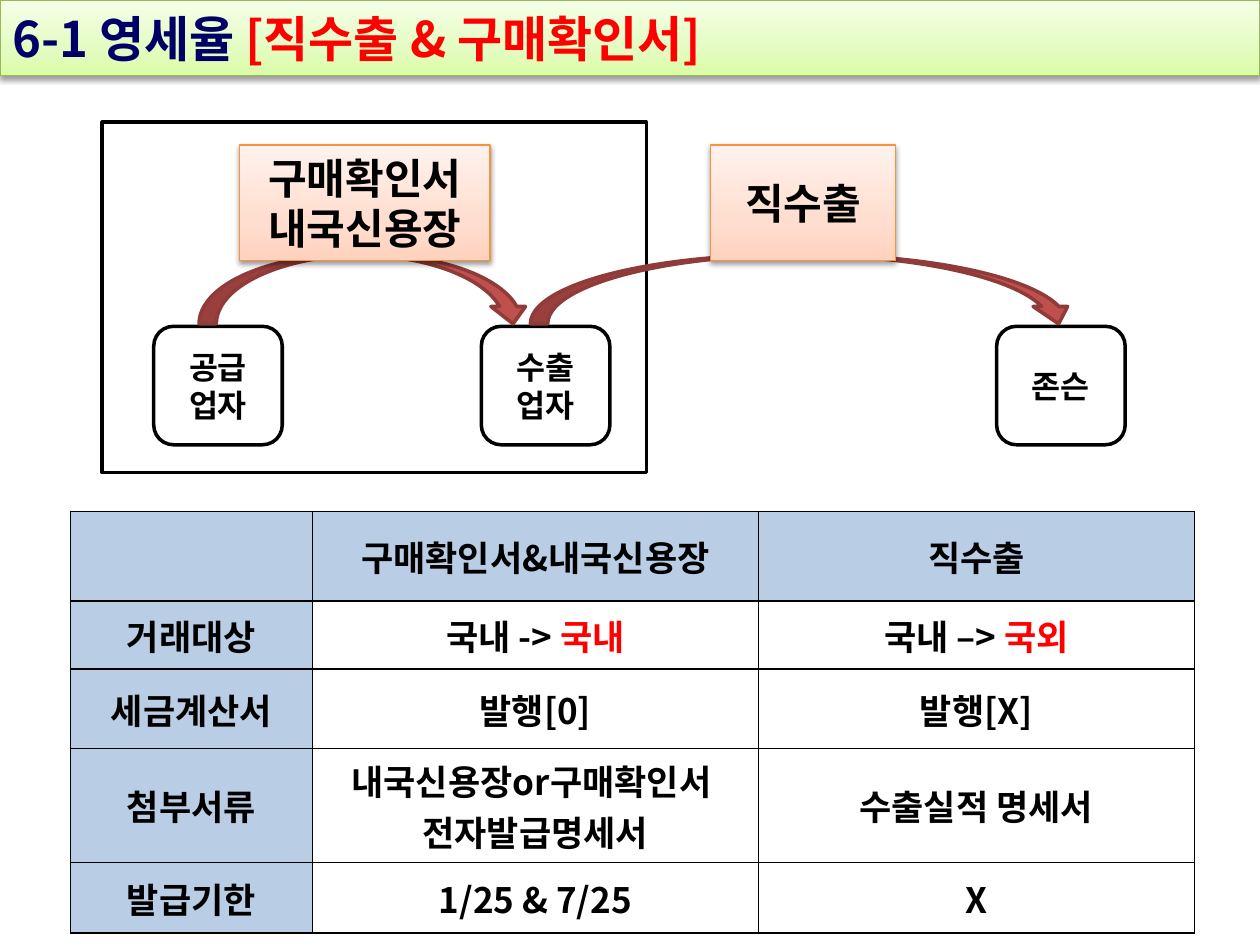
from dataclasses import dataclass

from lxml import etree
from pptx import Presentation
from pptx.dml.color import RGBColor
from pptx.enum import shapes, text
from pptx.oxml import ns
from pptx.util import Inches, Pt


@dataclass(frozen=True)
class Theme:
    font: str = "Noto Sans CJK KR"
    black: str = "000000"
    white: str = "FFFFFF"
    navy: str = "000066"
    red: str = "FF0000"
    header: str = "B9CDE5"
    arrow: str = "C0504D"
    arrow_line: str = "8E3B39"
    green: tuple = ((0, "DAFDA7"), (35, "E4FCC2"), (100, "F5FFE7"))
    green_line: str = "98B955"
    orange: tuple = ((0, "FFD2BD"), (35, "FFDED0"), (100, "FFF2ED"))
    orange_line: str = "F69240"
    title_size: int = 28
    label_size: int = 24
    table_size: int = 20
    party_size: int = 18


THEME = Theme()
SHAPE = shapes.MSO_SHAPE


def sub(parent, tag, **attributes):
    return etree.SubElement(parent, ns.qn(tag), {k: str(v) for k, v in attributes.items()})


def write(frame, lines, size, align=text.PP_ALIGN.CENTER):
    """Each line is a list of (words, colour) runs."""
    for i, line in enumerate(lines):
        paragraph = frame.paragraphs[0] if i == 0 else frame.add_paragraph()
        paragraph.alignment = align
        for words, colour in line:
            run = paragraph.add_run()
            run.text = words
            for key, value in {"name": THEME.font, "size": Pt(size), "bold": True}.items():
                setattr(run.font, key, value)
            run.font.color.rgb = RGBColor.from_string(colour)
            sub(run.font._element, "a:ea", typeface=THEME.font)


def plain(*lines):
    return [[(line, THEME.black)] for line in lines]


def add_box(slide, kind, box, fill, line, width):
    shape = slide.shapes.add_shape(kind, *map(Inches, box))
    shape.shadow.inherit = False
    shape.line.color.rgb = RGBColor.from_string(line)
    shape.line.width = Pt(width)
    shape.text_frame.vertical_anchor = text.MSO_ANCHOR.MIDDLE
    if isinstance(fill, str):
        shape.fill.solid()
        shape.fill.fore_color.rgb = RGBColor.from_string(fill)
    else:
        add_gradient_and_shadow(shape, fill)
    return shape


def add_gradient_and_shadow(shape, stops):
    shape.fill.gradient()
    shape.fill.gradient_angle = 90
    properties = shape._element.spPr
    stop_list = properties.find(".//" + ns.qn("a:gsLst"))
    for old in list(stop_list):
        stop_list.remove(old)
    for position, colour in stops:
        sub(sub(stop_list, "a:gs", pos=position * 1000), "a:srgbClr", val=colour)
    shadow = sub(properties.find(ns.qn("a:effectLst")), "a:outerShdw", blurRad=Pt(3.1),
                 dist=Pt(1.6), dir=90 * 60000, rotWithShape=0)
    sub(sub(shadow, "a:srgbClr", val=THEME.black), "a:alpha", val=38000)


def add_title(slide, box):
    bar = add_box(slide, SHAPE.RECTANGLE, box, THEME.green, THEME.green_line, 0.75)
    write(bar.text_frame,
          [[("6-1 영세율 ", THEME.navy), ("[직수출 & 구매확인서]", THEME.red)]],
          THEME.title_size, text.PP_ALIGN.LEFT)


def add_trade_flow(slide, box):
    left, top, _, height = box

    # Domestic frame
    add_box(slide, SHAPE.FLOWCHART_PROCESS, (left, top, 4.32, height),
            THEME.white, THEME.black, 2)

    # Trading parties
    parties = [(0.41, ("공급", "업자")), (3.01, ("수출", "업자")), (7.1, ("존슨",))]
    for x, lines in parties:
        party = add_box(slide, SHAPE.FLOWCHART_ALTERNATE_PROCESS,
                        (left + x, top + 1.62, 1.02, 0.94), THEME.white, THEME.black, 2)
        write(party.text_frame, plain(*lines), THEME.party_size)

    # Arrows from party to party
    for x, width in [(3.4, 4.33), (0.77, 2.63)]:
        add_box(slide, SHAPE.CURVED_DOWN_ARROW, (left + x, top + 1.05, width, 0.55),
                THEME.arrow, THEME.arrow_line, 2)

    # Labels over the arrows
    for x, width, lines in [(4.83, 1.47, ("직수출",)),
                            (1.09, 1.99, ("구매확인서", "내국신용장"))]:
        label = add_box(slide, SHAPE.RECTANGLE, (left + x, top + 0.18, width, 0.92),
                        THEME.orange, THEME.orange_line, 0.75)
        write(label.text_frame, plain(*lines), THEME.label_size)


def add_borders(cell):
    properties = cell._tc.get_or_add_tcPr()
    for side in ("a:lnL", "a:lnR", "a:lnT", "a:lnB"):
        border = sub(properties, side, w=Pt(1))
        sub(sub(border, "a:solidFill"), "a:srgbClr", val=THEME.black)


def add_comparison(slide, box):
    rows = [
        [[], plain("구매확인서&내국신용장"), plain("직수출")],
        [plain("거래대상"),
         [[("국내 -> ", THEME.black), ("국내", THEME.red)]],
         [[("국내 –> ", THEME.black), ("국외", THEME.red)]]],
        [plain("세금계산서"), plain("발행[0]"), plain("발행[X]")],
        [plain("첨부서류"), plain("내국신용장or구매확인서 ", "전자발급명세서"),
         plain("수출실적 명세서")],
        [plain("발급기한"), plain("1/25 & 7/25"), plain("X")],
    ]
    frame = slide.shapes.add_table(len(rows), len(rows[0]), *map(Inches, box))
    table = frame.table
    for column, width in zip(table.columns, (1.92, 3.54, 3.46)):
        column.width = Inches(width)
    for row, height in zip(table.rows, (0.71, 0.54, 0.63, 0.41, 0.56)):
        row.height = Inches(height)
    frame.height = Inches(box[3])

    for r, row in enumerate(rows):
        for c, lines in enumerate(row):
            cell = table.cell(r, c)
            cell.vertical_anchor = text.MSO_ANCHOR.MIDDLE
            add_borders(cell)
            if r == 0 or c == 0:
                cell.fill.solid()
                cell.fill.fore_color.rgb = RGBColor.from_string(THEME.header)
            else:
                cell.fill.background()
            write(cell.text_frame, lines, THEME.table_size)


def main():
    deck = Presentation()
    deck.slide_width, deck.slide_height = Inches(10), Inches(7.5)
    slide = deck.slides.add_slide(deck.slide_layouts[6])
    add_title(slide, (0, 0, 10, 0.6))
    add_trade_flow(slide, (0.81, 0.97, 8.12, 2.78))
    add_comparison(slide, (0.56, 4.06, 8.93, 3.2))
    deck.save("out.pptx")


if __name__ == "__main__":
    main()
